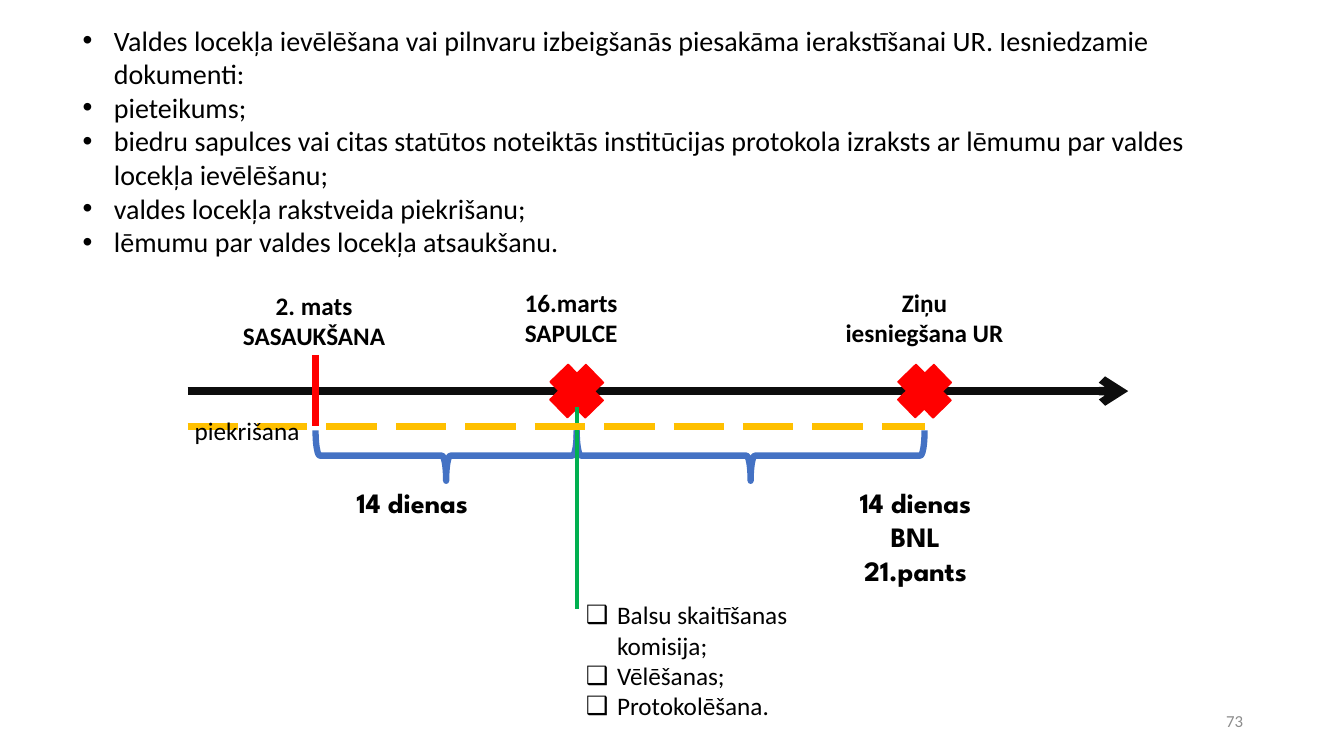
"""Build a timeline slide on registering board member changes."""
from dataclasses import dataclass

from lxml.etree import SubElement
from pptx import Presentation
from pptx.dml.color import RGBColor
from pptx.enum.dml import MSO_LINE
from pptx.enum.shapes import MSO_CONNECTOR, MSO_SHAPE
from pptx.enum.text import MSO_ANCHOR, MSO_AUTO_SIZE, PP_ALIGN
from pptx.oxml.ns import qn
from pptx.util import Inches, Pt

AXIS_Y = 3.88
CONSENT_Y = 4.23
AXIS_START = 1.86
NOTICE_X, MEETING_X, FILING_X = 3.13, 5.72, 9.17
MARKER_SIZE = 0.5
BRACE_TOP, BRACE_DEPTH = 4.27, 0.5
BULLET_INDENT = 0.31


@dataclass(frozen=True)
class Label:
    box: tuple[float, float, float, float]
    paragraphs: tuple[str, ...]
    size: float = 18
    font: str = "Calibri"
    color: str = "000000"
    bold: bool = False
    align: PP_ALIGN = PP_ALIGN.LEFT
    anchor: MSO_ANCHOR = MSO_ANCHOR.TOP
    bullet: str = ""
    grows: bool = True


@dataclass(frozen=True)
class Rule:
    start: tuple[float, float]
    end: tuple[float, float]
    color: str
    width: float
    dash: MSO_LINE | None = None
    arrow: bool = False


HEADING = {"bold": True, "align": PP_ALIGN.CENTER}
PERIOD = {**HEADING, "size": 20, "font": "League Spartan"}

PAGE_NUMBER = Label((9.42, 6.95, 3, 0.4), ("73",), size=12, color="8C8C8C",
                    align=PP_ALIGN.RIGHT, anchor=MSO_ANCHOR.MIDDLE, grows=False)
LABELS = (
    Label((4.8, 2.8, 1.73, 0.71), ("16.marts SAPULCE",), **HEADING),
    Label((3.38, 4.77, 1.42, 0.77), ("14 dienas",), **PERIOD),
    Label((8.37, 4.77, 1.42, 1.45), ("14 dienas", "BNL 21.pants"), **PERIOD),
    Label((2.31, 2.83, 1.61, 0.71), ("2. mats SASAUKŠANA",), **HEADING),
    Label((8.28, 2.8, 1.78, 0.71), ("Ziņu iesniegšana UR",), **HEADING),
    Label((5.72, 5.9, 2.33, 1.31),
          ("Balsu skaitīšanas komisija;", "Vēlēšanas;", "Protokolēšana."), bullet="❑"),
    Label((1.84, 4.07, 1.27, 0.4), ("piekrišana",)),
    Label((0.73, 0.18, 11.43, 2.46), (
        "Valdes locekļa ievēlēšana vai pilnvaru izbeigšanās piesakāma ierakstīšanai UR. "
        "Iesniedzamie dokumenti:",
        "pieteikums;",
        "biedru sapulces vai citas statūtos noteiktās institūcijas protokola izraksts "
        "ar lēmumu par valdes locekļa ievēlēšanu;",
        "valdes locekļa rakstveida piekrišanu;",
        "lēmumu par valdes locekļa atsaukšanu.",
    ), size=20, bullet="•"),
)
AXIS = Rule((AXIS_START, AXIS_Y), (11.19, AXIS_Y), "0D0D0D", 6, arrow=True)
NOTICE_TICK = Rule((NOTICE_X, 3.52), (NOTICE_X, CONSENT_Y), "FF0000", 4.5)
MEETING_STEM = Rule((MEETING_X, 4.04), (MEETING_X, 6.04), "00B050", 3)
CONSENT_LINE = Rule((AXIS_START, CONSENT_Y), (FILING_X, CONSENT_Y), "FFC000", 4.5,
                    dash=MSO_LINE.LONG_DASH)


def rgb(value: str) -> RGBColor:
    return RGBColor.from_string(value)


def set_all(target, values: dict) -> None:
    for name, value in values.items():
        setattr(target, name, value)


def add_bullet(paragraph, character: str) -> None:
    properties = paragraph._p.get_or_add_pPr()
    properties.set("marL", str(Inches(BULLET_INDENT)))
    properties.set("indent", str(-Inches(BULLET_INDENT)))
    SubElement(properties, qn("a:buFont")).set("typeface", "Arial")
    SubElement(properties, qn("a:buChar")).set("char", character)


def add_label(slide, label: Label) -> None:
    text_box = slide.shapes.add_textbox(*map(Inches, label.box))
    frame = text_box.text_frame
    set_all(frame, {
        "word_wrap": True,
        "auto_size": MSO_AUTO_SIZE.SHAPE_TO_FIT_TEXT if label.grows else MSO_AUTO_SIZE.NONE,
        "vertical_anchor": label.anchor,
        "margin_left": Inches(0.09),
        "margin_right": Inches(0.09),
    })
    for index, text in enumerate(label.paragraphs):
        paragraph = frame.add_paragraph() if index else frame.paragraphs[0]
        paragraph.alignment = label.align
        if label.bullet:
            add_bullet(paragraph, label.bullet)
        run = paragraph.add_run()
        run.text = text
        set_all(run.font, {"name": label.font, "size": Pt(label.size), "bold": label.bold})
        run.font.color.rgb = rgb(label.color)


def add_rule(slide, rule: Rule) -> None:
    connector = slide.shapes.add_connector(
        MSO_CONNECTOR.STRAIGHT, *map(Inches, (*rule.start, *rule.end)))
    connector.line.color.rgb = rgb(rule.color)
    set_all(connector.line, {"width": Pt(rule.width), "dash_style": rule.dash})
    if rule.arrow:
        SubElement(connector.line._get_or_add_ln(), qn("a:tailEnd")).set("type", "arrow")
    SubElement(connector._element.spPr, qn("a:effectLst"))


def add_outlined_shape(slide, kind: MSO_SHAPE, center: tuple[float, float],
                       size: tuple[float, float], rotation: float,
                       color: str, width: float, filled: bool) -> None:
    left, top = (middle - length / 2 for middle, length in zip(center, size))
    shape = slide.shapes.add_shape(kind, *map(Inches, (left, top, *size)))
    shape.rotation = rotation
    shape.shadow.inherit = False
    if filled:
        shape.fill.solid()
        shape.fill.fore_color.rgb = rgb(color)
    else:
        shape.fill.background()
    shape.line.color.rgb = rgb(color)
    shape.line.width = Pt(width)


def add_marker(slide, x: float) -> None:
    add_outlined_shape(slide, MSO_SHAPE.CROSS, (x, AXIS_Y), (MARKER_SIZE, MARKER_SIZE),
                       315.8, "FF0000", 1, True)


def add_period_brace(slide, start: float, end: float) -> None:
    center = ((start + end) / 2, BRACE_TOP + BRACE_DEPTH / 2)
    add_outlined_shape(slide, MSO_SHAPE.LEFT_BRACE, center, (BRACE_DEPTH, end - start),
                       270, "4472C4", 4.5, False)


def main() -> None:
    presentation = Presentation()
    set_all(presentation, {"slide_width": Inches(13.33), "slide_height": Inches(7.5)})
    slide = presentation.slides.add_slide(presentation.slide_layouts[6])
    add_label(slide, PAGE_NUMBER)
    add_rule(slide, AXIS)
    for x in (MEETING_X, FILING_X):
        add_marker(slide, x)
    add_rule(slide, NOTICE_TICK)
    for start, end in ((NOTICE_X, MEETING_X), (MEETING_X, FILING_X)):
        add_period_brace(slide, start, end)
    for rule in (MEETING_STEM, CONSENT_LINE):
        add_rule(slide, rule)
    for label in LABELS:
        add_label(slide, label)
    presentation.save("out.pptx")


if __name__ == "__main__":
    main()
